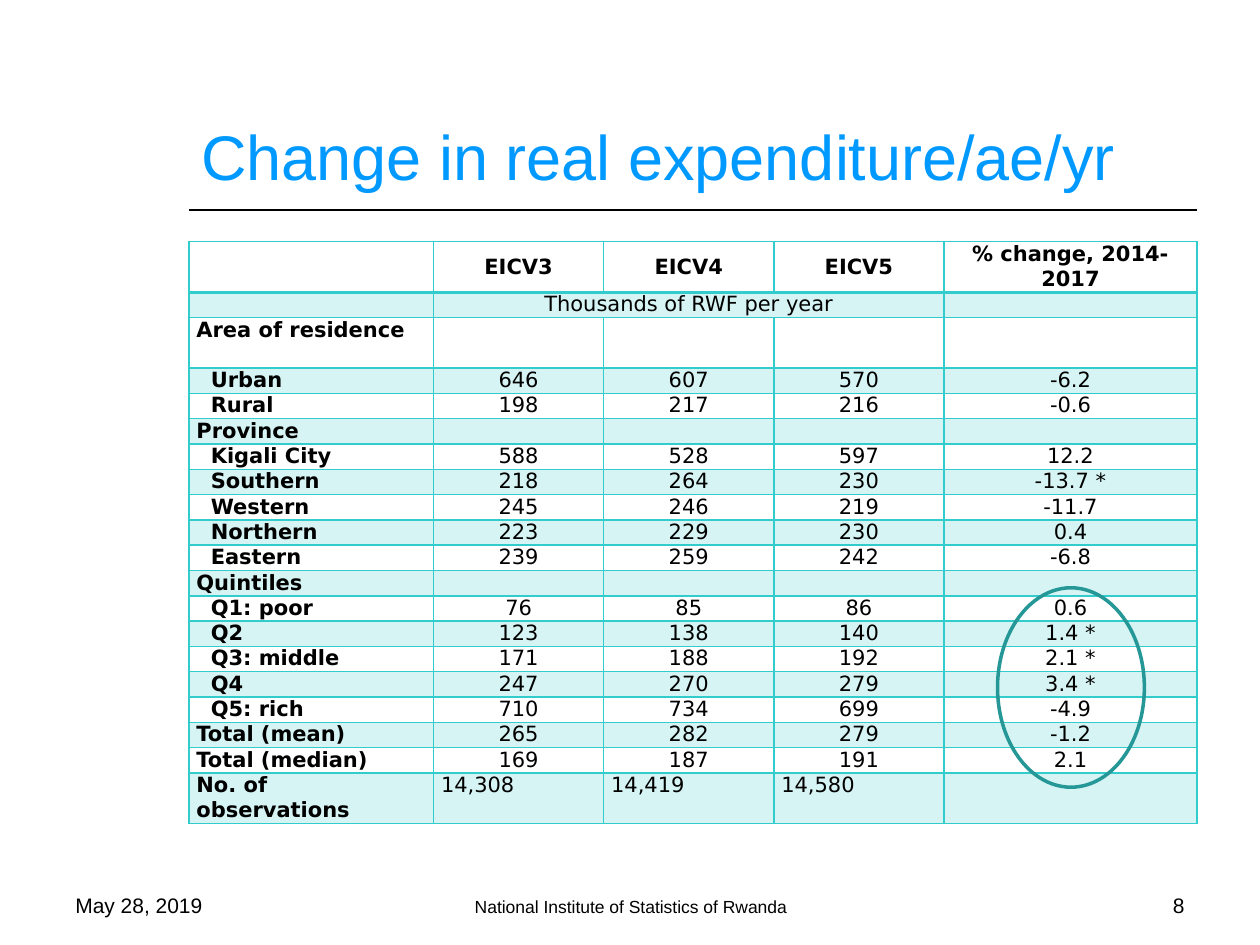
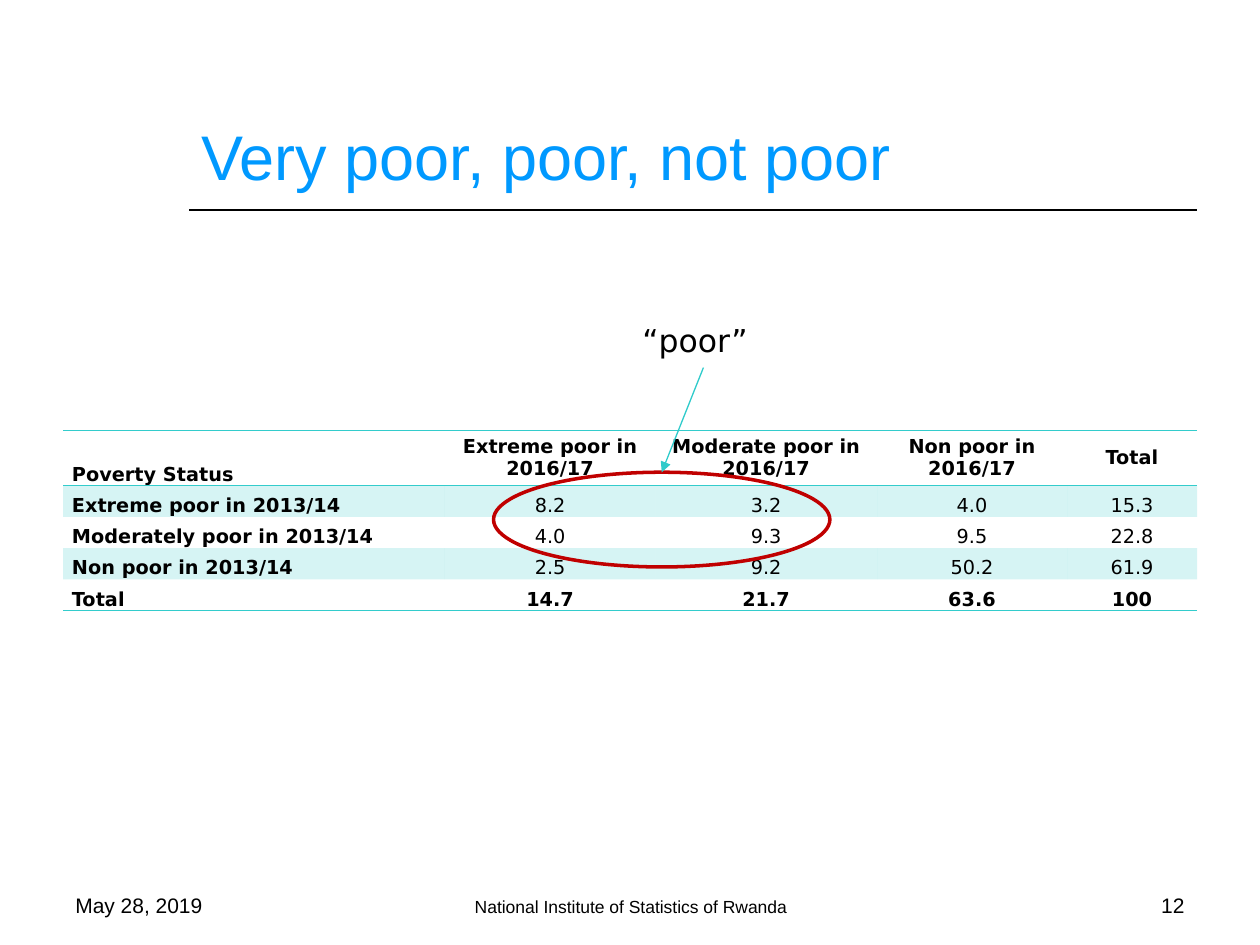
from lxml.etree import SubElement
from pptx import Presentation
from pptx.dml.color import RGBColor
from pptx.enum.shapes import MSO_CONNECTOR, MSO_SHAPE
from pptx.enum.text import MSO_ANCHOR, PP_ALIGN
from pptx.oxml.ns import qn
from pptx.util import Cm, Pt

COLORS = {
    "title": "0099FF",
    "text": "000000",
    "grid": "33CCCC",
    "arrow": "2ECBCB",
    "change ring": "269797",
    "poor ring": "C00000",
}
TITLE_FONT, TABLE_FONT = "Arial", "DejaVu Sans"
NO_TABLE_STYLE = "{2D5ABB26-0587-4C30-8999-92F81FD0307C}"
BAND_OPACITY = 20
LEFT, CENTER, RIGHT = PP_ALIGN.LEFT, PP_ALIGN.CENTER, PP_ALIGN.RIGHT

DATE = "May 28, 2019"
INSTITUTE = "National Institute of Statistics of Rwanda"

EXPENDITURE_TITLE = "Change in real expenditure/ae/yr"
EXPENDITURE_HEADER = ("", "EICV3", "EICV4", "EICV5", "% change, 2014-2017")
EXPENDITURE_UNIT = "Thousands of RWF per year"
EXPENDITURE_GROUPS = {
    "Area of residence": [
        ("Urban", "646", "607", "570", "-6.2"),
        ("Rural", "198", "217", "216", "-0.6"),
    ],
    "Province": [
        ("Kigali City", "588", "528", "597", "12.2"),
        ("Southern", "218", "264", "230", "-13.7 *"),
        ("Western", "245", "246", "219", "-11.7"),
        ("Northern", "223", "229", "230", "0.4"),
        ("Eastern", "239", "259", "242", "-6.8"),
    ],
    "Quintiles": [
        ("Q1: poor", "76", "85", "86", "0.6"),
        ("Q2", "123", "138", "140", "1.4 *"),
        ("Q3: middle", "171", "188", "192", "2.1 *"),
        ("Q4", "247", "270", "279", "3.4 *"),
        ("Q5: rich", "710", "734", "699", "-4.9"),
    ],
}
EXPENDITURE_TOTALS = [
    ("Total (mean)", "265", "282", "279", "-1.2"),
    ("Total (median)", "169", "187", "191", "2.1"),
    ("No. of observations", "14,308", "14,419", "14,580", ""),
]
EXPENDITURE_WIDTHS = (4.93, 3.43, 3.43, 3.43, 5.1)
EXPENDITURE_LINE = 0.51
TWO_LINE_LABELS = ("", "Area of residence", "No. of observations")

POVERTY_TITLE = "Very poor, poor, not poor"
POVERTY_ROWS = [
    ("Poverty Status", "Extreme poor in 2016/17", "Moderate poor in 2016/17",
     "Non poor in 2016/17", "Total"),
    ("Extreme poor in 2013/14", "8.2", "3.2", "4.0", "15.3"),
    ("Moderately poor in 2013/14", "4.0", "9.3", "9.5", "22.8"),
    ("Non poor in 2013/14", "2.5", "9.2", "50.2", "61.9"),
    ("Total", "14.7", "21.7", "63.6", "100"),
]
POVERTY_WIDTHS = (7.7, 4.24, 4.47, 3.83, 2.62)
POVERTY_HEIGHTS = (1.11, 0.63, 0.63, 0.63, 0.63)
POOR_LABEL = "“poor”"


def rgb(name):
    return RGBColor.from_string(COLORS[name])


def style_paragraph(paragraph, text, size, font, color="text", align=LEFT, bold=False):
    paragraph.text = text
    paragraph.alignment = align
    paragraph.font.size = Pt(size)
    paragraph.font.name = font
    paragraph.font.bold = bold
    paragraph.font.color.rgb = rgb(color)


def add_text(slide, box, text, size, font=TITLE_FONT, color="text", align=LEFT,
             anchor=MSO_ANCHOR.BOTTOM):
    frame = slide.shapes.add_textbox(*map(Cm, box)).text_frame
    frame.word_wrap = True
    frame.vertical_anchor = anchor
    style_paragraph(frame.paragraphs[0], text, size, font, color, align)


def add_line(slide, start, end, color, width, arrow=False):
    line = slide.shapes.add_connector(MSO_CONNECTOR.STRAIGHT, *map(Cm, start + end))
    line.line.color.rgb = rgb(color)
    line.line.width = Pt(width)
    properties = line._element.spPr
    if arrow:
        SubElement(properties.find(qn("a:ln")), qn("a:tailEnd"), type="triangle")
    SubElement(properties, qn("a:effectLst"))


def add_ring(slide, box, color):
    ring = slide.shapes.add_shape(MSO_SHAPE.OVAL, *map(Cm, box))
    ring.shadow.inherit = False
    ring.fill.background()
    ring.line.color.rgb = rgb(color)
    ring.line.width = Pt(2)


def add_page(deck, title, number):
    """Add a slide with the shared title, rule and footer."""
    slide = deck.slides.add_slide(deck.slide_layouts[6])
    add_line(slide, (3.81, 4.24), (24.13, 4.24), "text", 1)
    add_text(slide, (3.81, 0.84, 20.32, 3.18), title, 36, color="title")
    add_text(slide, (1.27, 17.35, 5.92, 1.27), DATE, 12)
    add_text(slide, (8.69, 17.35, 8.05, 1.27), INSTITUTE, 10, align=CENTER)
    add_text(slide, (18.21, 17.35, 5.92, 1.27), str(number), 12, align=RIGHT)
    return slide


def add_plain_table(slide, left, top, widths, heights):
    table = slide.shapes.add_table(
        len(heights), len(widths), Cm(left), Cm(top),
        Cm(sum(widths)), Cm(sum(heights))).table
    table.first_row = table.horz_banding = False
    table._tbl.tblPr.find(qn("a:tableStyleId")).text = NO_TABLE_STYLE
    for column, width in zip(table.columns, widths):
        column.width = Cm(width)
    for row, height in zip(table.rows, heights):
        row.height = Cm(height)
    return table


def fill_cell(cell, text, size, align, bold, anchor, inset, banded, borders, indent=0):
    """Borders map a side (L, R, T, B) to its width in points, in that order."""
    cell.margin_left, cell.margin_right = Cm(inset + indent), Cm(inset)
    cell.margin_top = cell.margin_bottom = 0
    cell.vertical_anchor = anchor
    paragraph = cell.text_frame.paragraphs[0]
    style_paragraph(paragraph, text, size, TABLE_FONT, align=align, bold=bold)
    if not text:
        SubElement(paragraph._p, qn("a:endParaRPr"), sz=str(size * 100))

    properties = cell._tc.get_or_add_tcPr()
    for side, width in borders.items():
        border = SubElement(properties, qn(f"a:ln{side}"), w=str(Pt(width)))
        solid = SubElement(border, qn("a:solidFill"))
        SubElement(solid, qn("a:srgbClr"), val=COLORS["grid"])
    if banded:
        cell.fill.solid()
        cell.fill.fore_color.rgb = rgb("grid")
        tint = properties.find(qn("a:solidFill")).find(qn("a:srgbClr"))
        SubElement(tint, qn("a:alpha"), val=str(BAND_OPACITY * 1000))
    else:
        cell.fill.background()


def add_expenditure_slide(deck):
    slide = add_page(deck, EXPENDITURE_TITLE, 8)
    rows = [EXPENDITURE_HEADER, ("", EXPENDITURE_UNIT, "", "", "")]
    members = set()
    for group, lines in EXPENDITURE_GROUPS.items():
        rows.append((group, "", "", "", ""))
        members.update(range(len(rows), len(rows) + len(lines)))
        rows += lines
    rows += EXPENDITURE_TOTALS

    unit_row, last_row = 1, len(rows) - 1
    heights = [EXPENDITURE_LINE * (2 if row[0] in TWO_LINE_LABELS and r != unit_row else 1)
               for r, row in enumerate(rows)]
    table = add_plain_table(slide, 3.81, 4.87, EXPENDITURE_WIDTHS, heights)
    for r, row in enumerate(rows):
        borders = {"L": 1, "R": 1, "T": 2 if r == unit_row else 1, "B": 2 if r == 0 else 1}
        for c, text in enumerate(row):
            fill_cell(
                table.cell(r, c), text, 12,
                align=LEFT if c == 0 or r == last_row else CENTER,
                bold=r == 0 or c == 0,
                anchor=MSO_ANCHOR.MIDDLE if r == 0 else MSO_ANCHOR.TOP,
                inset=0.15, banded=r % 2 == 1, borders=borders,
                indent=0.29 if c == 0 and r in members else 0)
    table.cell(unit_row, 1).merge(table.cell(unit_row, 3))
    add_ring(slide, (20.11, 11.85, 2.96, 4.02), "change ring")


def add_poverty_slide(deck):
    slide = add_page(deck, POVERTY_TITLE, 12)
    table = add_plain_table(slide, 1.27, 8.68, POVERTY_WIDTHS, POVERTY_HEIGHTS)
    last_row = len(POVERTY_ROWS) - 1
    row_borders = {0: {"T": 1, "B": 1}, last_row: {"B": 1}}
    for r, row in enumerate(POVERTY_ROWS):
        for c, text in enumerate(row):
            fill_cell(
                table.cell(r, c), text, 11,
                align=CENTER if c else LEFT,
                bold=c == 0 or r in (0, last_row),
                anchor=MSO_ANCHOR.MIDDLE if r == 0 and c else MSO_ANCHOR.BOTTOM,
                inset=0.18, banded=r % 2 == 1, borders=row_borders.get(r, {}))
    add_ring(slide, (9.95, 9.52, 6.78, 1.91), "poor ring")
    add_line(slide, (14.18, 7.41), (13.34, 9.52), "arrow", 0.75, arrow=True)
    add_text(slide, (12.7, 6.35, 2.75, 1.03), POOR_LABEL, 18, TABLE_FONT,
             anchor=MSO_ANCHOR.TOP)


def main():
    deck = Presentation()
    deck.slide_width, deck.slide_height = Cm(25.4), Cm(19.05)
    add_expenditure_slide(deck)
    add_poverty_slide(deck)
    deck.save("out.pptx")


if __name__ == "__main__":
    main()
